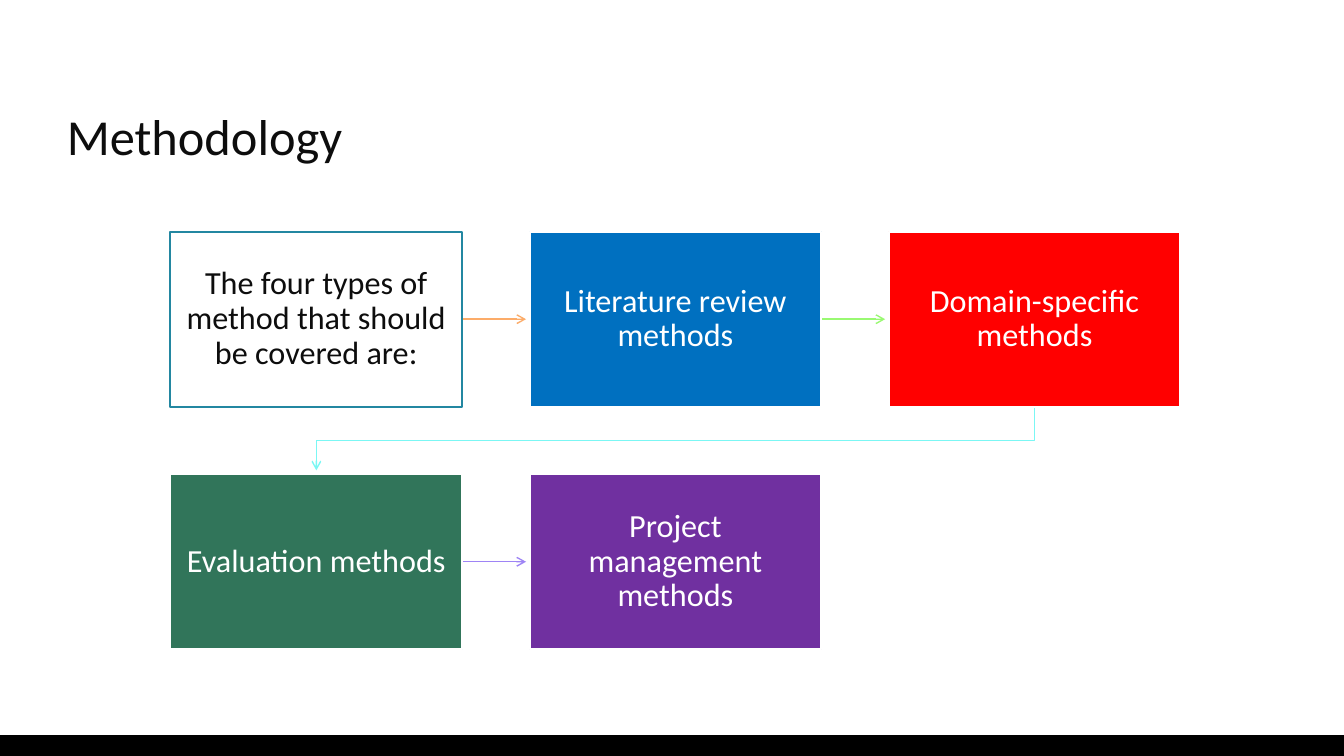
from lxml.etree import SubElement
from pptx import Presentation
from pptx.dml.color import RGBColor
from pptx.enum.shapes import MSO_CONNECTOR as Connector, MSO_SHAPE as Shape
from pptx.enum.text import MSO_ANCHOR as Anchor, MSO_AUTO_SIZE as AutoSize, PP_ALIGN as Align
from pptx.oxml.ns import qn
from pptx.util import Pt

BLACK = RGBColor(0x00, 0x00, 0x00)
INK = RGBColor(0x0D, 0x0D, 0x0D)
WHITE = RGBColor(0xFF, 0xFF, 0xFF)
TEAL = RGBColor(0x23, 0x87, 0xA1)
BLUE = RGBColor(0x00, 0x70, 0xC0)
RED = RGBColor(0xFF, 0x00, 0x00)
GREEN = RGBColor(0x31, 0x75, 0x5A)
PURPLE = RGBColor(0x70, 0x30, 0xA0)
ORANGE = RGBColor(0xFC, 0xAC, 0x69)
LIME = RGBColor(0x99, 0xF9, 0x72)
CYAN = RGBColor(0x7B, 0xF7, 0xF4)
LILAC = RGBColor(0x9E, 0x84, 0xF5)

SLIDE_WIDTH, SLIDE_HEIGHT = 960, 540
BAR_HEIGHT = 15
BOX_WIDTH, BOX_HEIGHT = 208.5, 125
LEFT, TOP = 121.75, 165.5
COLUMN_STEP, ROW_STEP = 256.5, 173.25
ARROW_LENGTH = 45.5


def write(shape, text, size, color, alignment):
    frame = shape.text_frame
    frame.word_wrap = True
    frame.auto_size = AutoSize.NONE
    paragraph = frame.paragraphs[0]
    paragraph.alignment = alignment
    paragraph.line_spacing = 0.9
    run = paragraph.add_run()
    run.text = text
    for name, value in {"name": "Calibri", "size": Pt(size), "bold": False}.items():
        setattr(run.font, name, value)
    run.font.color.rgb = color


def style_arrow(shape, color):
    """Give a line its colour and an open arrowhead, without a shadow."""
    shape.line.color.rgb = color
    shape.line.width = Pt(1)
    properties = shape.element.spPr
    SubElement(properties.find(qn("a:ln")), qn("a:tailEnd"), type="arrow")
    SubElement(properties, qn("a:effectLst"))


presentation = Presentation()
presentation.slide_width = Pt(SLIDE_WIDTH)
presentation.slide_height = Pt(SLIDE_HEIGHT)
slide = presentation.slides.add_slide(presentation.slide_layouts[5])
shapes = slide.shapes

bar = shapes.add_shape(Shape.RECTANGLE, Pt(0), Pt(SLIDE_HEIGHT - BAR_HEIGHT),
                       Pt(SLIDE_WIDTH), Pt(BAR_HEIGHT))
bar.shadow.inherit = False
bar.fill.solid()
bar.fill.fore_color.rgb = BLACK
bar.line.fill.background()

title = shapes.title
title.left, title.top, title.width, title.height = Pt(40.5), Pt(76.25), Pt(879), Pt(57)
title.text_frame.vertical_anchor = Anchor.TOP
write(title, "Methodology", 36, INK, Align.LEFT)

# Arrows between neighbours: column, row, colour
for column, row, color in [(0, 0, ORANGE), (1, 0, LIME), (0, 1, LILAC)]:
    start = LEFT + column * COLUMN_STEP + BOX_WIDTH
    middle = TOP + row * ROW_STEP + BOX_HEIGHT / 2
    arrow = shapes.add_connector(Connector.STRAIGHT, Pt(start), Pt(middle),
                                 Pt(start + ARROW_LENGTH), Pt(middle))
    style_arrow(arrow, color)

# Arrow from the end of the first row to the start of the second
first_center = LEFT + BOX_WIDTH / 2
last_center = first_center + 2 * COLUMN_STEP
row_bottom = TOP + BOX_HEIGHT
turn = row_bottom + 24
builder = shapes.build_freeform(Pt(last_center), Pt(row_bottom))
builder.add_line_segments(
    [(Pt(last_center), Pt(turn)), (Pt(first_center), Pt(turn)),
     (Pt(first_center), Pt(row_bottom + ARROW_LENGTH))], close=False)
row_arrow = builder.convert_to_shape()
row_arrow.fill.background()
style_arrow(row_arrow, CYAN)

# Boxes: text, fill, line, font colour
boxes = [
    ("The four types of method that should be covered are:", None, TEAL, INK),
    ("Literature review methods", BLUE, WHITE, WHITE),
    ("Domain-specific methods", RED, WHITE, WHITE),
    ("Evaluation methods", GREEN, WHITE, WHITE),
    ("Project management methods", PURPLE, WHITE, WHITE),
]
box_margins = {"margin_left": Pt(10), "margin_right": Pt(10),
               "margin_top": Pt(10.75), "margin_bottom": Pt(10.75),
               "vertical_anchor": Anchor.MIDDLE}
for index, (text, fill, line, font_color) in enumerate(boxes):
    row, column = divmod(index, 3)
    box = shapes.add_shape(Shape.RECTANGLE, Pt(LEFT + column * COLUMN_STEP),
                           Pt(TOP + row * ROW_STEP), Pt(BOX_WIDTH), Pt(BOX_HEIGHT))
    box.shadow.inherit = False
    if fill is None:
        box.fill.background()
    else:
        box.fill.solid()
        box.fill.fore_color.rgb = fill
    box.line.color.rgb = line
    box.line.width = Pt(1.5)
    for name, value in box_margins.items():
        setattr(box.text_frame, name, value)
    write(box, text, 23, font_color, Align.CENTER)

presentation.save("out.pptx")
